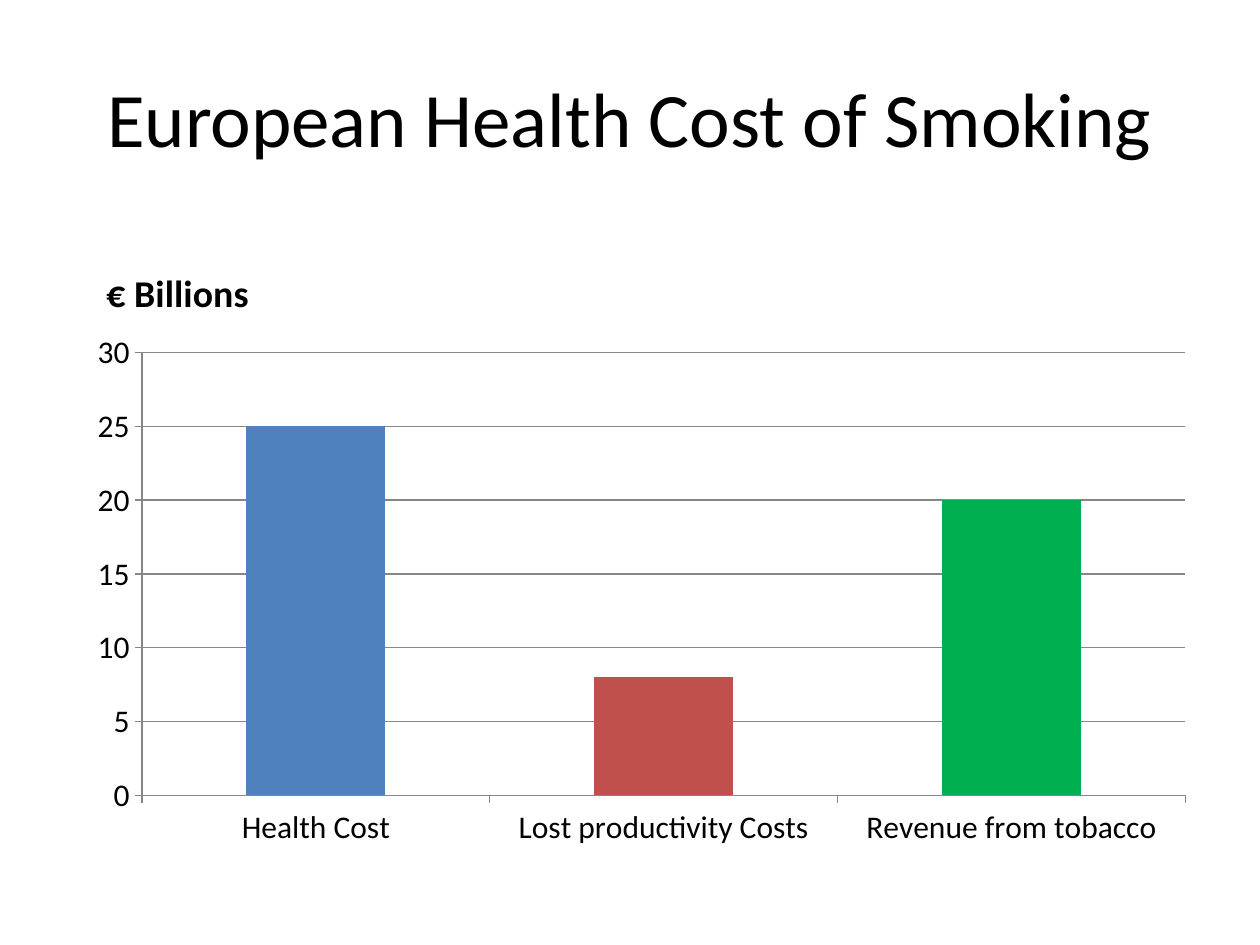
from lxml.etree import SubElement
from pptx import Presentation
from pptx.chart.data import CategoryChartData
from pptx.dml.color import RGBColor
from pptx.enum.chart import XL_CHART_TYPE, XL_TICK_MARK
from pptx.enum.text import MSO_ANCHOR, PP_ALIGN
from pptx.oxml.ns import qn
from pptx.util import Pt

PX = 914400 / 126
FONT = "Calibri"
COLORS = {"text": "000000", "line": "878787", "health": "4F81BD",
          "lost": "C0504D", "revenue": "00B050"}
BARS = [("Health Cost", 25, "health"),
        ("Lost productivity Costs", 8, "lost"),
        ("Revenue from tobacco", 20, "revenue")]


def rgb(name):
    return RGBColor.from_string(COLORS[name])


def emu(box):
    return [round(v * PX) for v in box]


def style(font, size, bold=False):
    font.name, font.size, font.bold = FONT, Pt(size), bold
    font.color.rgb = rgb("text")


def set_layout(parent, before, inner=False, **fractions):
    """Place a chart part by fractions of the chart area."""
    for old in parent.findall(qn("c:layout")):
        parent.remove(old)
    layout = parent.makeelement(qn("c:layout"))
    parent.find(qn(before)).addprevious(layout)
    manual = SubElement(layout, qn("c:manualLayout"))
    values = {"xMode": "edge", "yMode": "edge", **fractions}
    if inner:
        values = {"layoutTarget": "inner", **values}
    for tag, value in values.items():
        SubElement(manual, qn(f"c:{tag}")).set("val", str(value))


def add_title(s, box):
    tf = s.shapes.add_textbox(*emu(box)).text_frame
    tf.word_wrap = True
    tf.vertical_anchor = MSO_ANCHOR.MIDDLE
    p = tf.paragraphs[0]
    p.alignment = PP_ALIGN.CENTER
    r = p.add_run()
    r.text = "European Health Cost of Smoking"
    style(r.font, 44)


def add_cost_chart(s, box):
    data = CategoryChartData()
    data.categories = [name for name, _, _ in BARS]
    data.add_series("Series 1", [value for _, value, _ in BARS])
    chart = s.shapes.add_chart(XL_CHART_TYPE.COLUMN_CLUSTERED,
                               *emu(box), data).chart
    style(chart.font, 18)
    chart.has_legend = False

    # Unit heading above the axis
    r = chart.chart_title.text_frame.paragraphs[0].add_run()
    r.text = " € Billions"
    style(r.font, 21.6, bold=True)
    title = chart.chart_title._element
    chart.chart_title.include_in_layout = False
    set_layout(title, "c:overlay", x=0.015, y=0.04)

    # Axes and gridlines
    value_axis = chart.value_axis
    value_axis.minimum_scale, value_axis.maximum_scale = 0, 30
    value_axis.major_unit = 5
    value_axis.has_major_gridlines = True
    for axis in (chart.category_axis, value_axis):
        axis.major_tick_mark = XL_TICK_MARK.OUTSIDE
        axis.minor_tick_mark = XL_TICK_MARK.NONE
    for part in (chart.category_axis, value_axis, value_axis.major_gridlines):
        part.format.line.color.rgb = rgb("line")
        part.format.line.width = Pt(0.75)

    # Columns, one colour each
    plot = chart.plots[0]
    plot.gap_width = 150
    plot.vary_by_categories = False
    series = plot.series[0]
    series.format.fill.solid()
    series.format.fill.fore_color.rgb = rgb("health")
    for i, (_, _, color) in enumerate(BARS[1:], 1):
        fill = series.points[i].format.fill
        fill.solid()
        fill.fore_color.rgb = rgb(color)
    set_layout(plot._element.getparent(), "c:barChart", inner=True,
               x=0.06, y=0.19, w=0.92, h=0.71)


def main():
    prs = Presentation()
    prs.slide_width, prs.slide_height = emu((1260, 945))
    s = prs.slides.add_slide(prs.slide_layouts[6])
    add_title(s, (63, 38, 1134, 158))
    add_cost_chart(s, (74, 234, 1134, 624))
    prs.save("out.pptx")


if __name__ == "__main__":
    main()
